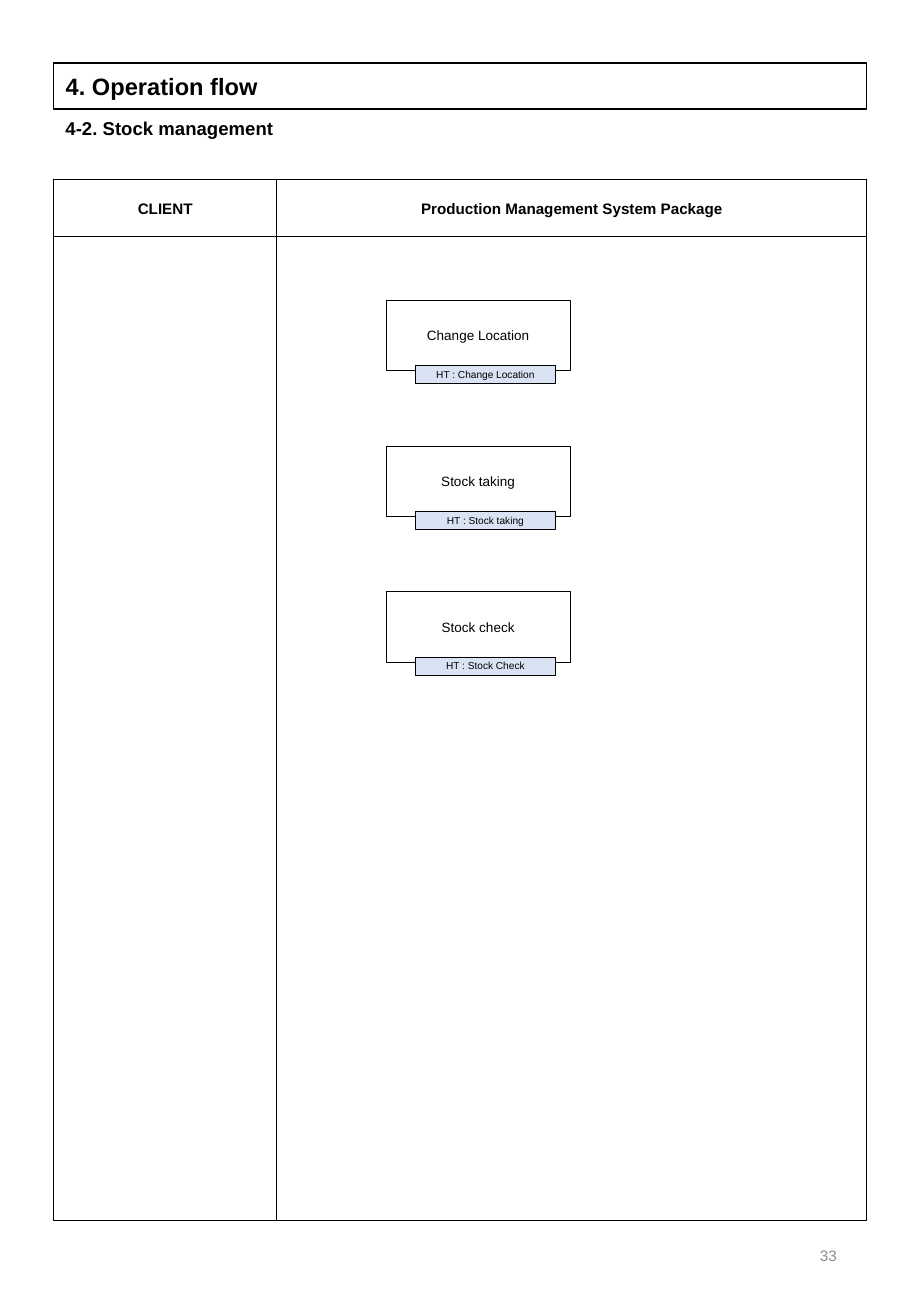
from dataclasses import dataclass

from lxml import etree
from pptx import Presentation
from pptx.dml.color import RGBColor
from pptx.enum.shapes import MSO_CONNECTOR, MSO_SHAPE
from pptx.enum.text import MSO_ANCHOR, MSO_AUTO_SIZE, PP_ALIGN
from pptx.oxml.ns import qn
from pptx.util import Cm, Pt

RECTANGLE = MSO_SHAPE.RECTANGLE
STRAIGHT = MSO_CONNECTOR.STRAIGHT
MIDDLE, TOP = MSO_ANCHOR.MIDDLE, MSO_ANCHOR.TOP
NO_FIT = MSO_AUTO_SIZE.NONE
LEFT, CENTER, RIGHT = PP_ALIGN.LEFT, PP_ALIGN.CENTER, PP_ALIGN.RIGHT


@dataclass(frozen=True)
class Theme:
    """Colours, font and type sizes of the slide."""
    font: str = "Arial"
    ink: RGBColor = RGBColor(0x00, 0x00, 0x00)
    muted: RGBColor = RGBColor(0x8C, 0x8C, 0x8C)
    tag_fill: RGBColor = RGBColor(0xDA, 0xE3, 0xF3)
    title: int = 14
    subtitle: int = 11
    header: int = 9
    step: int = 8
    tag: int = 6
    thin: float = 0.25
    divider: float = 0.5
    thick: float = 1


THEME = Theme()
STEPS = [
    ("Change Location", "HT : Change Location"),
    ("Stock taking", "HT : Stock taking"),
    ("Stock check", "HT : Stock Check"),
]


def put_text(holder, text, size, bold=False, color=THEME.ink, align=CENTER, anchor=MIDDLE):
    """Write one formatted paragraph into a shape."""
    frame = holder.text_frame
    frame.word_wrap = True
    frame.auto_size = NO_FIT
    frame.vertical_anchor = anchor
    paragraph = frame.paragraphs[0]
    paragraph.alignment = align
    run = paragraph.add_run()
    run.text = text
    run.font.name = THEME.font
    run.font.size = Pt(size)
    run.font.bold = bold
    run.font.color.rgb = color


def add_label(slide, box, text, size, **style):
    """Add a text box at the given box in centimetres."""
    label = slide.shapes.add_textbox(*map(Cm, box))
    put_text(label, text, size, **style)


def add_box(slide, box, fill=None):
    """Add a thinly outlined rectangle at the given box in centimetres."""
    outline = slide.shapes.add_shape(RECTANGLE, *map(Cm, box))
    outline.shadow.inherit = False
    outline.line.color.rgb = THEME.ink
    outline.line.width = Pt(THEME.thin)
    if fill is None:
        outline.fill.background()
    else:
        outline.fill.solid()
        outline.fill.fore_color.rgb = fill
    return outline


def add_heading(slide, box):
    """Place the framed title and the subtitle below it."""
    left, top, width, height = box
    title = slide.shapes.title
    title.left, title.top, title.width, title.height = map(Cm, box)
    title.line.color.rgb = THEME.ink
    title.line.width = Pt(THEME.thick)
    put_text(title, "4. Operation flow", THEME.title, bold=True, align=LEFT)
    add_label(slide, (left, top + height + 0.05, width, 0.74), "4-2. Stock management",
              THEME.subtitle, bold=True, align=LEFT, anchor=TOP)


def add_lanes(slide, box):
    """Draw the two-lane frame with its header row and divider."""
    left, top, width, height = box
    header_height, first_width = 1.2, 4.67
    add_box(slide, box)
    add_box(slide, (left, top, width, header_height))
    middle = left + first_width
    divider = slide.shapes.add_connector(
        STRAIGHT, Cm(middle), Cm(top), Cm(middle), Cm(top + height))
    divider.line.color.rgb = THEME.ink
    divider.line.width = Pt(THEME.divider)
    etree.SubElement(divider.line._get_or_add_ln().getparent(), qn("a:effectLst"))
    lanes = [
        (left, first_width, "CLIENT"),
        (middle, width - first_width, "Production Management System Package"),
    ]
    for lane_left, lane_width, name in lanes:
        add_label(slide, (lane_left, top + 0.02, lane_width, header_height),
                  name, THEME.header, bold=True)


def add_step(slide, box, name, terminal):
    """Draw a process step with its terminal tag on the lower edge."""
    left, top, width, height = box
    put_text(add_box(slide, box), name, THEME.step)
    tag = add_box(slide, (left + 0.61, top + height - 0.11, 2.92, 0.38), THEME.tag_fill)
    frame = tag.text_frame
    frame.margin_left = frame.margin_right = frame.margin_top = frame.margin_bottom = 0
    put_text(tag, terminal, THEME.tag)


def add_steps(slide, box, pitch):
    """Stack the process steps downwards from the given first box."""
    left, top, width, height = box
    for index, (name, terminal) in enumerate(STEPS):
        add_step(slide, (left, top + index * pitch, width, height), name, terminal)


def main():
    """Build the stock management slide."""
    deck = Presentation()
    deck.slide_width, deck.slide_height = Cm(19.05), Cm(27.51)
    slide = deck.slides.add_slide(deck.slide_layouts[5])
    add_heading(slide, (1.12, 1.32, 17, 0.96))
    add_lanes(slide, (1.12, 3.74, 17, 21.76))
    add_steps(slide, (8.08, 6.27, 3.84, 1.47), 3.05)
    add_label(slide, (13.46, 25.5, 4.29, 1.47), "33",
              THEME.header, color=THEME.muted, align=RIGHT)
    deck.save("out.pptx")


if __name__ == "__main__":
    main()
